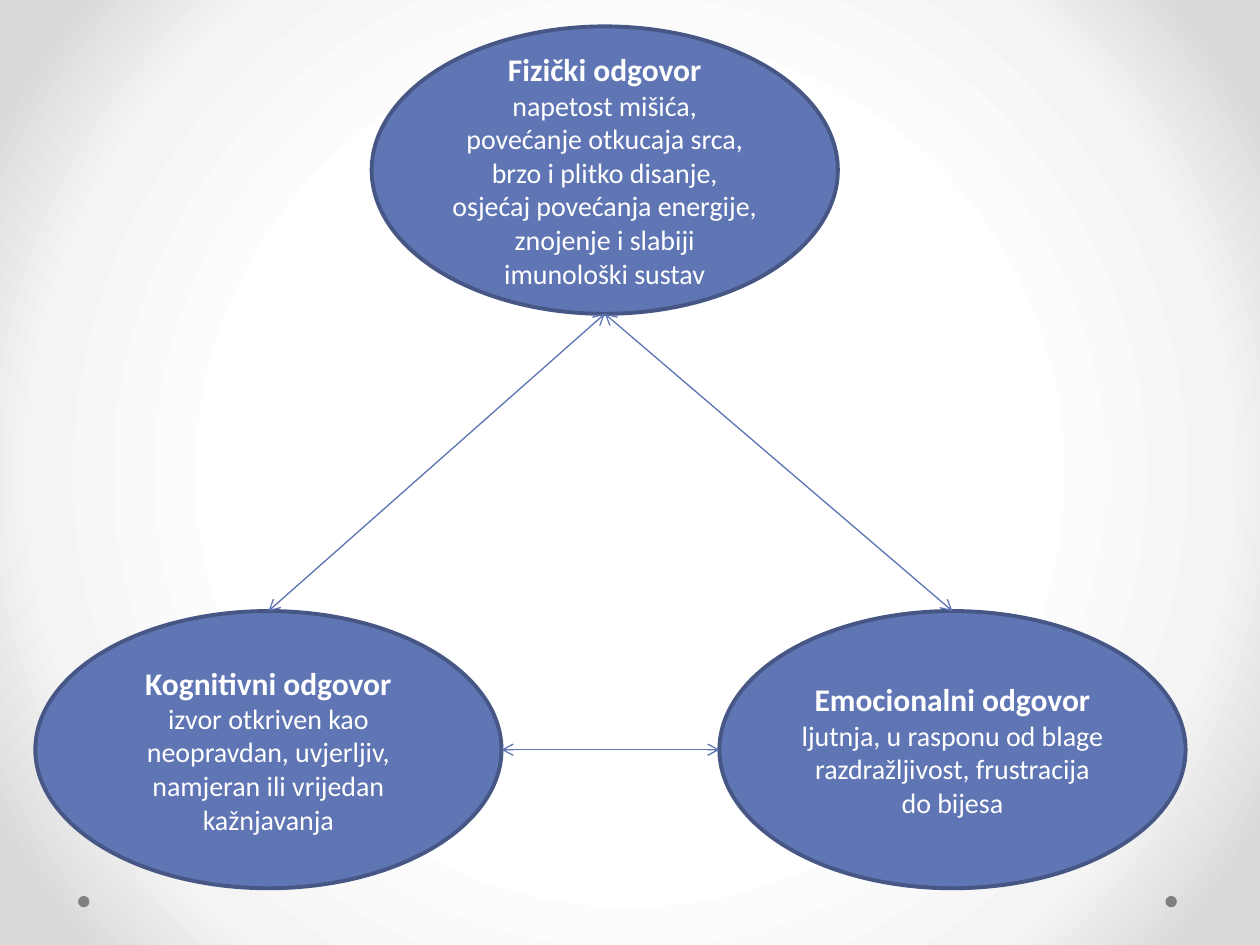
from lxml.etree import SubElement
from pptx import Presentation
from pptx.dml.color import RGBColor
from pptx.enum.shapes import MSO_CONNECTOR, MSO_SHAPE
from pptx.enum.text import MSO_ANCHOR, PP_ALIGN
from pptx.oxml.ns import qn
from pptx.util import Pt

COLORS = {"fill": "6076B4", "outline": "475785", "arrow": "5C72B2",
          "dot": "808080", "text": "FFFFFF"}
BACKGROUND_STOPS = [(50, "FFFFFF"), (76, "F4F4F4"), (92, "DADADA")]
OVAL_WIDTH = 266.4
DOT_SIZE = 6.5
DOT_TOP = 512
DOT_LEFTS = [666, 44.6]
RESPONSES = {
    "physical": (212.4, 15.1, 164.2, "Fizički odgovor",
                 "napetost mišića, povećanje otkucaja srca, brzo i plitko disanje, "
                 "osjećaj povećanja energije, znojenje i slabiji imunološki sustav"),
    "cognitive": (20.2, 349.2, 158.4, "Kognitivni odgovor",
                  "izvor otkriven kao neopravdan, uvjerljiv, namjeran ili vrijedan kažnjavanja"),
    "emotional": (411.1, 349.2, 158.4, "Emocionalni odgovor",
                  "ljutnja, u rasponu od blage razdražljivost, frustracija do bijesa"),
}
LINKS = [("physical", "bottom", "cognitive", "top"),
         ("physical", "bottom", "emotional", "top"),
         ("cognitive", "right", "emotional", "left")]
SIDES = {"top": (0.5, 0), "bottom": (0.5, 1), "left": (0, 0.5), "right": (1, 0.5)}


def color(name):
    return RGBColor.from_string(COLORS[name])


def paint_background(slide):
    slide.background.fill.gradient()
    gradient = slide.element.find(".//" + qn("a:gradFill"))
    for child in list(gradient):
        gradient.remove(child)
    stops = SubElement(gradient, qn("a:gsLst"))
    for position, value in BACKGROUND_STOPS:
        stop = SubElement(stops, qn("a:gs"), pos=str(position * 1000))
        SubElement(stop, qn("a:srgbClr"), val=value)
    circle = SubElement(gradient, qn("a:path"), path="circle")
    SubElement(circle, qn("a:fillToRect"), l="50000", t="50000", r="50000", b="50000")


def add_oval(slide, left, top, width, height, fill):
    oval = slide.shapes.add_shape(MSO_SHAPE.OVAL, Pt(left), Pt(top), Pt(width), Pt(height))
    oval.shadow.inherit = False
    oval.fill.solid()
    oval.fill.fore_color.rgb = color(fill)
    oval.line.fill.background()
    return oval


def add_response(slide, left, top, height, heading, description):
    oval = add_oval(slide, left, top, OVAL_WIDTH, height, "fill")
    oval.line.color.rgb = color("outline")
    oval.line.width = Pt(2.25)
    frame = oval.text_frame
    frame.word_wrap = True
    frame.vertical_anchor = MSO_ANCHOR.MIDDLE
    frame.text = heading + "\n" + description
    for para, size, bold in zip(frame.paragraphs, (18, 16), (True, False)):
        para.alignment = PP_ALIGN.CENTER
        font = para.runs[0].font
        font.name = "Calibri"
        font.size = Pt(size)
        font.bold = bold
        font.color.rgb = color("text")


def side_point(name, side):
    left, top, height = RESPONSES[name][:3]
    across, down = SIDES[side]
    return Pt(left + OVAL_WIDTH * across), Pt(top + height * down)


def add_arrow(slide, start, end):
    arrow = slide.shapes.add_connector(MSO_CONNECTOR.STRAIGHT, *start, *end)
    arrow.line.color.rgb = color("arrow")
    arrow.line.width = Pt(0.75)
    properties = arrow.element.spPr
    outline = properties.find(qn("a:ln"))
    for tag in ("a:headEnd", "a:tailEnd"):
        SubElement(outline, qn(tag), type="arrow")
    SubElement(properties, qn("a:effectLst"))


def main():
    deck = Presentation()
    deck.slide_width, deck.slide_height = Pt(720), Pt(540)
    slide = deck.slides.add_slide(deck.slide_layouts[6])
    paint_background(slide)
    for left in DOT_LEFTS:
        add_oval(slide, left, DOT_TOP, DOT_SIZE, DOT_SIZE, "dot")
    for response in RESPONSES.values():
        add_response(slide, *response)
    for first, first_side, second, second_side in LINKS:
        add_arrow(slide, side_point(first, first_side), side_point(second, second_side))
    deck.save("out.pptx")


if __name__ == "__main__":
    main()
